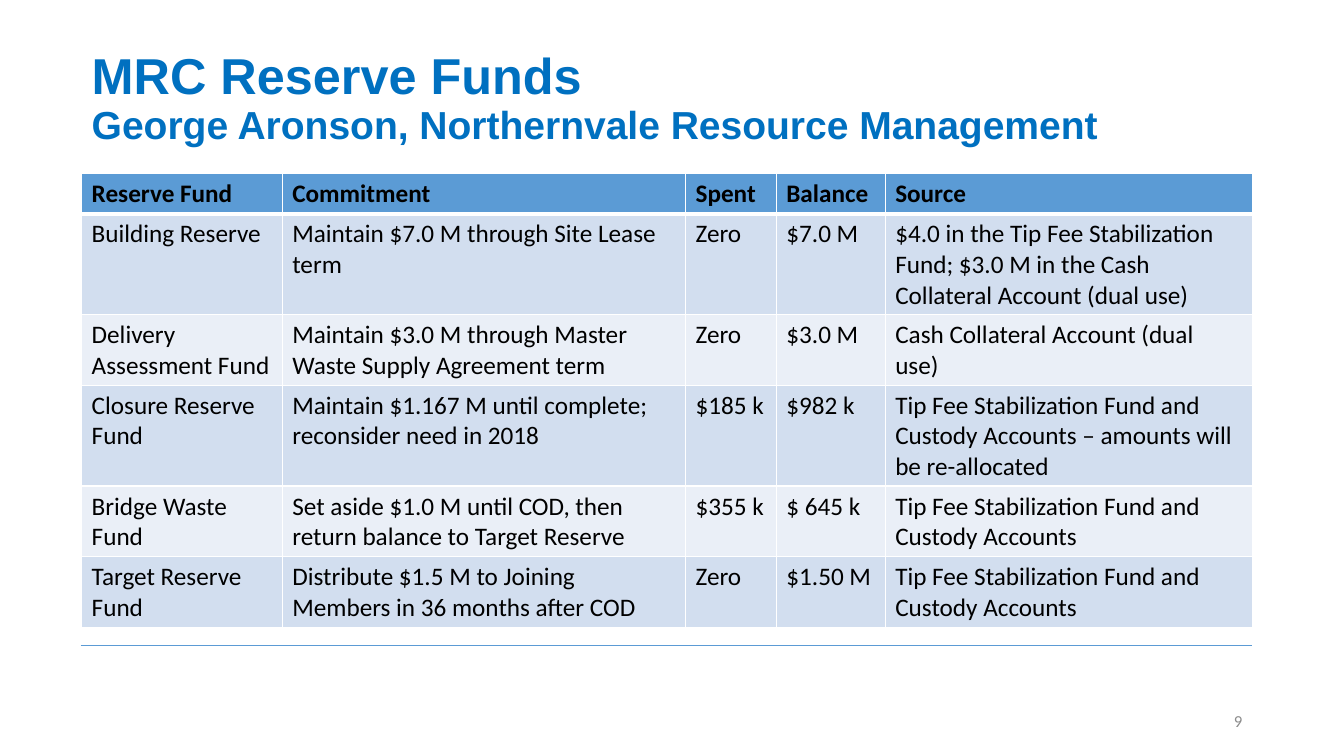
from lxml import etree
from pptx import Presentation
from pptx.dml.color import RGBColor
from pptx.enum.shapes import MSO_CONNECTOR as CONN
from pptx.enum.text import MSO_ANCHOR as ANCHOR, PP_ALIGN as ALIGN
from pptx.oxml.ns import qn
from pptx.util import Inches, Pt

BLUE, WHITE, BLACK, GREY = "5B9BD5", "FFFFFF", "000000", "8C8C8C"
BANDS = ["D2DEEF", "EAEFF7"]
COL_WIDTHS = [1.99, 4, 0.9, 1.08, 3.64]
ROW_HEIGHTS = [0.4, 0.99, 0.69, 0.99, 0.69, 0.69]
FUNDS = [
    ["Reserve Fund", "Commitment", "Spent", "Balance", "Source"],
    ["Building Reserve", "Maintain $7.0 M through Site Lease term", "Zero", "$7.0 M",
     "$4.0 in the Tip Fee Stabilization Fund; $3.0 M in the Cash Collateral Account (dual use)"],
    ["Delivery Assessment Fund", "Maintain $3.0 M through Master Waste Supply Agreement term",
     "Zero", "$3.0 M", "Cash Collateral Account (dual use)"],
    ["Closure Reserve Fund", "Maintain $1.167 M until complete; reconsider need in 2018",
     "$185 k", "$982 k",
     "Tip Fee Stabilization Fund and Custody Accounts – amounts will be re-allocated"],
    ["Bridge Waste Fund", "Set aside $1.0 M until COD, then return balance to Target Reserve",
     "$355 k", "$ 645 k", "Tip Fee Stabilization Fund and Custody Accounts"],
    ["Target Reserve Fund", "Distribute $1.5 M to Joining Members in 36 months after COD",
     "Zero", "$1.50 M", "Tip Fee Stabilization Fund and Custody Accounts"],
]


def rgb(color):
    return RGBColor.from_string(color)


def add_run(p, text, color, **fmt):
    r = p.add_run()
    r.text = text
    r.font.color.rgb = rgb(color)
    for name, value in fmt.items():
        setattr(r.font, name, value)


def place(sp, *box):
    for name, value in zip(("left", "top", "width", "height"), box):
        setattr(sp, name, Inches(value))


def add_title(s, lines):
    sp = s.shapes.title
    place(sp, 0.81, 0.26, 11.5, 1.45)
    tf = sp.text_frame
    tf.word_wrap = True
    tf.vertical_anchor = ANCHOR.MIDDLE
    p = tf.paragraphs[0]
    p.alignment = ALIGN.LEFT
    p.line_spacing = 0.9
    for i, (text, size) in enumerate(lines):
        if i:
            p.add_line_break()
        add_run(p, text, "0070C0", name="Arial", size=Pt(size), bold=True)


def add_rule(s):
    line = s.shapes.add_connector(CONN.STRAIGHT, Inches(0.8), Inches(6.4),
                                  Inches(12.42), Inches(6.4))
    line.line.color.rgb = rgb(BLUE)
    line.line.width = Pt(0.5)
    etree.SubElement(line._element.spPr, qn("a:effectLst"))


def add_page_number(s, number):
    sp = s.shapes.add_textbox(Inches(9.42), Inches(6.95), Inches(3), Inches(0.4))
    tf = sp.text_frame
    tf.word_wrap = True
    tf.vertical_anchor = ANCHOR.MIDDLE
    p = tf.paragraphs[0]
    p.alignment = ALIGN.RIGHT
    add_run(p, number, GREY, name="Calibri", size=Pt(12))


def set_borders(cell, widths):
    tcPr = cell._tc.get_or_add_tcPr()
    for i, (side, width) in enumerate(widths.items()):
        ln = etree.Element(qn("a:ln" + side), w=str(Pt(width)))
        fill = etree.SubElement(ln, qn("a:solidFill"))
        etree.SubElement(fill, qn("a:srgbClr"), val=WHITE)
        tcPr.insert(i, ln)


def add_fund_table(s):
    frame = s.shapes.add_table(len(FUNDS), len(COL_WIDTHS), Inches(0.81), Inches(1.72),
                               Inches(sum(COL_WIDTHS)), Inches(sum(ROW_HEIGHTS)))
    table = frame.table
    for col, width in zip(table.columns, COL_WIDTHS):
        col.width = Inches(width)
    for i, (row, height) in enumerate(zip(table.rows, ROW_HEIGHTS)):
        row.height = Inches(height)
        for cell, text in zip(row.cells, FUNDS[i]):
            cell.fill.solid()
            cell.fill.fore_color.rgb = rgb(BANDS[(i - 1) % 2] if i else BLUE)
            set_borders(cell, {"L": 1, "R": 1, "T": 3 if i == 1 else 1, "B": 1 if i else 3})
            add_run(cell.text_frame.paragraphs[0], text, BLACK,
                    name="Calibri", size=Pt(18), bold=i == 0)


def main():
    prs = Presentation()
    prs.slide_width, prs.slide_height = Inches(13.33), Inches(7.5)
    s = prs.slides.add_slide(prs.slide_layouts[5])
    add_rule(s)
    add_title(s, [("MRC Reserve Funds", 36),
                  ("George Aronson, Northernvale Resource Management", 27.9)])
    add_page_number(s, "9")
    add_fund_table(s)
    prs.save("out.pptx")


if __name__ == "__main__":
    main()
